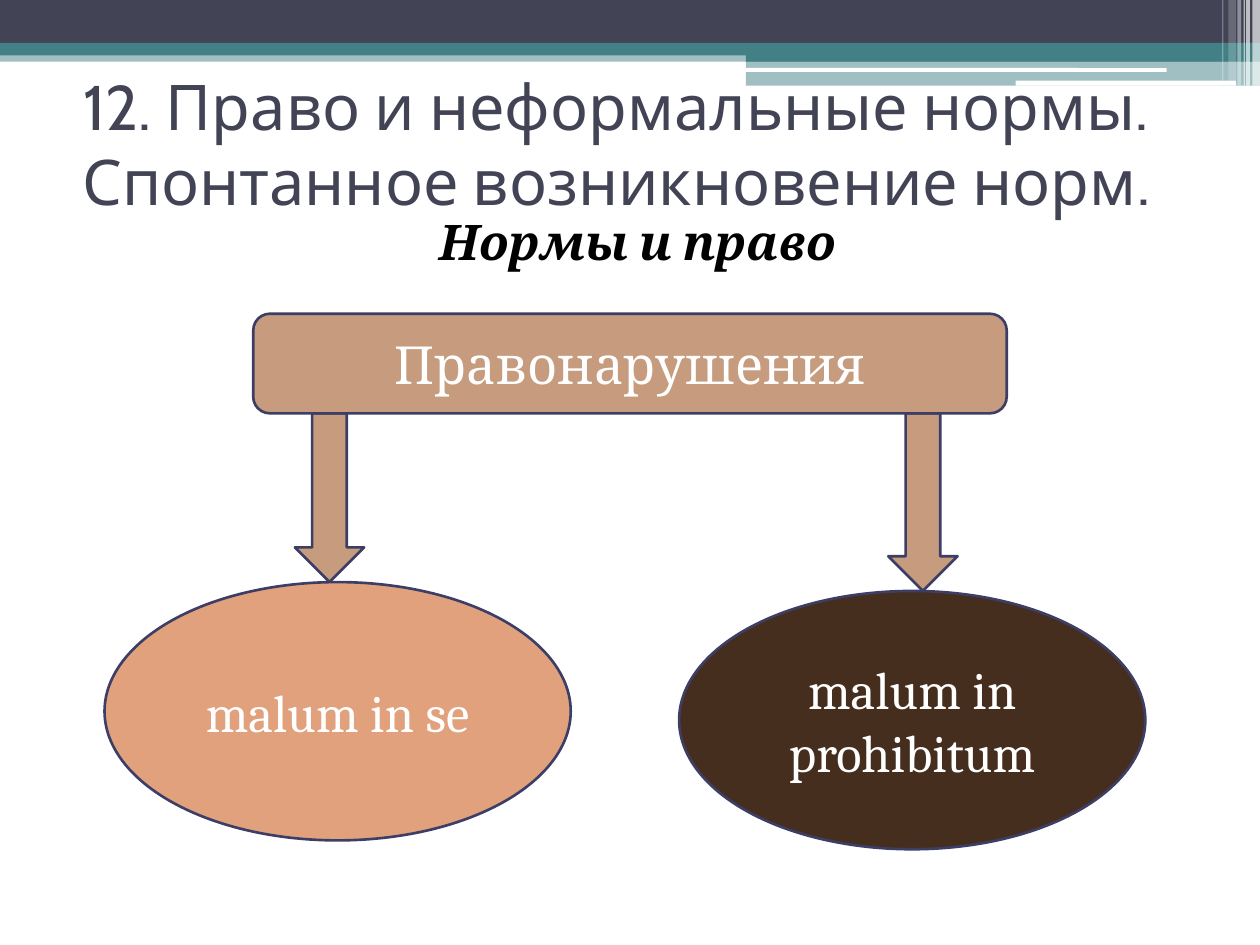
from dataclasses import dataclass
from typing import Optional

from lxml import etree
from pptx import Presentation
from pptx.dml.color import RGBColor
from pptx.enum.shapes import MSO_SHAPE
from pptx.enum.text import MSO_ANCHOR, PP_ALIGN
from pptx.oxml.ns import qn
from pptx.util import Inches, Pt

RECTANGLE = MSO_SHAPE.RECTANGLE
ROUNDED = MSO_SHAPE.ROUNDED_RECTANGLE
ELLIPSE = MSO_SHAPE.OVAL
DOWN_ARROW = MSO_SHAPE.DOWN_ARROW
CENTER = PP_ALIGN.CENTER
MIDDLE = MSO_ANCHOR.MIDDLE
TOP = MSO_ANCHOR.TOP

WHITE = RGBColor(0xFF, 0xFF, 0xFF)
BLACK = RGBColor(0x00, 0x00, 0x00)
SLATE = RGBColor(0x42, 0x44, 0x56)
TEAL = RGBColor(0x43, 0x80, 0x86)
TAN = RGBColor(0xC6, 0x9B, 0x7E)
PEACH = RGBColor(0xE1, 0xA1, 0x7C)
BROWN = RGBColor(0x46, 0x2E, 0x1F)
OUTLINE = RGBColor(0x3D, 0x3E, 0x66)

HEADING_FONT = "Cabin"
BODY_FONT = "Cambria"

# Grid of 100 columns by 75 rows
COLUMNS, ROWS = 100, 75
SLIDE_WIDTH, SLIDE_HEIGHT = Inches(10), Inches(7.5)


@dataclass(frozen=True)
class Area:
    """A place on the grid, in columns and rows."""
    column: float
    row: float
    columns: float
    rows: float

    def lengths(self) -> tuple:
        column_width, row_height = SLIDE_WIDTH / COLUMNS, SLIDE_HEIGHT / ROWS
        return (round(self.column * column_width), round(self.row * row_height),
                round(self.columns * column_width), round(self.rows * row_height))


@dataclass(frozen=True)
class Band:
    """A part of the header decoration."""
    area: Area
    color: RGBColor
    opacity: int = 100
    kind: int = RECTANGLE


@dataclass(frozen=True)
class Node:
    """An outlined part of the diagram."""
    kind: int
    area: Area
    color: RGBColor
    label: Optional[str] = None


@dataclass(frozen=True)
class TextStyle:
    font: str
    size: int
    color: RGBColor
    emphasis: bool = False


TITLE_STYLE = TextStyle(HEADING_FONT, 36, SLATE)
SUBTITLE_STYLE = TextStyle(BODY_FONT, 28, BLACK, emphasis=True)
NODE_STYLE = TextStyle(BODY_FONT, 30, WHITE)

BANDS = [
    Band(Area(0, 4, 100, 0.9), TEAL, 50),
    Band(Area(0, 0, 100, 3.4), SLATE),
    Band(Area(0, 3.4, 100, 1), TEAL),
    Band(Area(59.2, 3.9, 40.8, 1), TEAL),
    Band(Area(59.2, 4.8, 40.8, 2), TEAL, 50),
    Band(Area(59.1, 5.4, 33.5, 0.3), WHITE, kind=ROUNDED),
    Band(Area(80.6, 6.4, 17.5, 0.4), WHITE, kind=ROUNDED),
]

# Vertical stripes in the corner: column, columns, rows, opacity
STRIPES = [
    Band(Area(column, 0, columns, rows), WHITE, opacity)
    for column, columns, rows, opacity in (
        (99.4, 0.6, 6.8, 65), (98.9, 0.3, 6.8, 65), (98.7, 0.1, 6.8, 60),
        (98.2, 0.3, 6.8, 40), (97.5, 0.6, 6.4, 20), (97, 0.1, 6.4, 30))
]

# Each arrow runs from the bottom of the box to the top of its ellipse
BOX = Area(20.1, 24.9, 59.8, 7.9)
BOX_BOTTOM = BOX.row + BOX.rows
LEFT_TOP, RIGHT_TOP = 46.2, 46.9
ARROWS = [
    Node(DOWN_ARROW, Area(column, BOX_BOTTOM, 5.5, top - BOX_BOTTOM), TAN)
    for column, top in ((23.4, LEFT_TOP), (70.5, RIGHT_TOP))
]
NODES = [
    Node(ROUNDED, BOX, TAN, "Правонарушения"),
    Node(ELLIPSE, Area(8.3, LEFT_TOP, 37, 20.5), PEACH, "malum in se"),
    Node(ELLIPSE, Area(53.9, RIGHT_TOP, 37, 20.5), BROWN, "malum in prohibitum"),
]


def write_text(shape, text: str, style: TextStyle, anchor: int = MIDDLE):
    text_frame = shape.text_frame
    text_frame.word_wrap = True
    text_frame.vertical_anchor = anchor
    text_frame.text = text
    paragraph = text_frame.paragraphs[0]
    paragraph.alignment = CENTER
    font = paragraph.runs[0].font
    font.name, font.size = style.font, Pt(style.size)
    font.color.rgb = style.color
    font.bold = font.italic = style.emphasis
    return paragraph


def add_filled_shape(slide, kind: int, area: Area, color: RGBColor):
    shape = slide.shapes.add_shape(kind, *area.lengths())
    shape.shadow.inherit = False
    shape.fill.solid()
    shape.fill.fore_color.rgb = color
    return shape


def draw_band(slide, band: Band) -> None:
    shape = add_filled_shape(slide, band.kind, band.area, band.color)
    shape.line.fill.background()
    if band.opacity < 100:
        color = shape.fill._xPr.find(qn("a:solidFill"))[0]
        etree.SubElement(color, qn("a:alpha"), val=str(band.opacity * 1000))


def draw_node(slide, node: Node) -> None:
    shape = add_filled_shape(slide, node.kind, node.area, node.color)
    shape.line.color.rgb = OUTLINE
    shape.line.width = Pt(1.5)
    if node.label:
        write_text(shape, node.label, NODE_STYLE)


def add_text(slide, area: Area, text: str, style: TextStyle, anchor: int):
    return write_text(slide.shapes.add_textbox(*area.lengths()), text, style, anchor)


def main() -> None:
    presentation = Presentation()
    presentation.slide_width, presentation.slide_height = SLIDE_WIDTH, SLIDE_HEIGHT
    slide = presentation.slides.add_slide(presentation.slide_layouts[6])

    # Header decoration
    for band in BANDS + STRIPES:
        draw_band(slide, band)

    # Subtitle with a hanging indent
    subtitle = add_text(slide, Area(5, 17.2, 90, 5.4), "Нормы и право",
                        SUBTITLE_STYLE, TOP)
    subtitle.line_spacing = 0.8
    subtitle.space_before = Pt(12)
    properties = subtitle._p.get_or_add_pPr()
    properties.set("marL", str(Inches(0.4)))
    properties.set("indent", str(Inches(-0.28)))

    # Arrows lie behind the title and the nodes
    for arrow in ARROWS:
        draw_node(slide, arrow)

    add_text(slide, Area(3.9, 5.5, 90, 11.7),
             "12. Право и неформальные нормы. Спонтанное возникновение норм.",
             TITLE_STYLE, MIDDLE)

    for node in NODES:
        draw_node(slide, node)

    presentation.save("out.pptx")


if __name__ == "__main__":
    main()
